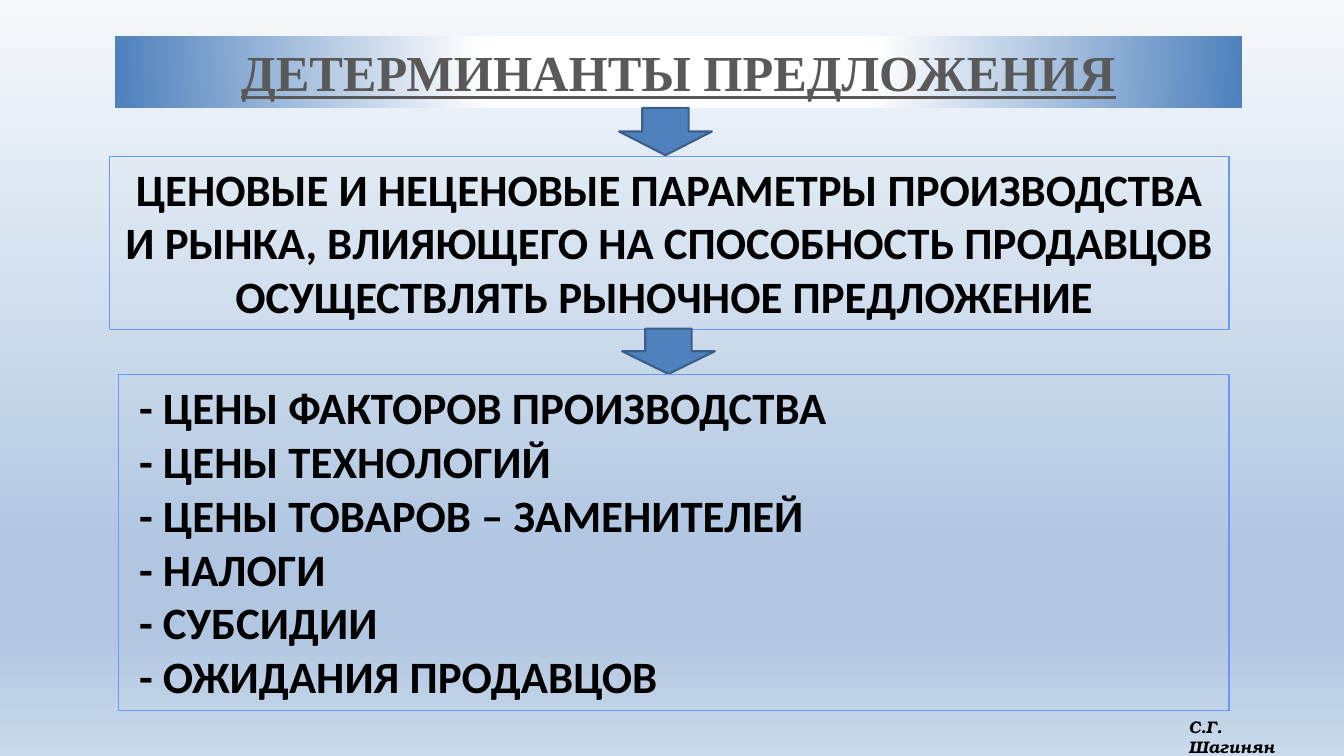
from dataclasses import dataclass

from lxml import etree
from pptx import Presentation
from pptx.dml.color import RGBColor
from pptx.enum.shapes import MSO_SHAPE
from pptx.enum.text import MSO_ANCHOR, MSO_AUTO_SIZE, PP_ALIGN
from pptx.oxml.ns import qn
from pptx.util import Inches, Pt

RECTANGLE, DOWN_ARROW = MSO_SHAPE.RECTANGLE, MSO_SHAPE.DOWN_ARROW
LEFT, CENTER = PP_ALIGN.LEFT, PP_ALIGN.CENTER
TOP = MSO_ANCHOR.TOP
GROW = MSO_AUTO_SIZE.SHAPE_TO_FIT_TEXT


@dataclass(frozen=True)
class Theme:
    blue: str = "4F81BD"
    arrow_edge: str = "3A5F8C"
    frame: str = "6699FF"
    title: str = "595959"
    text: str = "000000"
    title_font: str = "Times New Roman"
    body_font: str = "Calibri"
    author_font: str = "TeX Gyre Bonum"
    title_size: int = 36
    body_size: int = 32
    author_size: int = 12
    page_stops: tuple = ((0, "F6F9FC"), (74, "B0C6E1"), (83, "B0C6E1"), (100, "CAD9EB"))
    banner_stops: tuple = ((0, "FFFFFF"), (35, "FFFFFF"), (100, "4F81BD"))


THEME = Theme()

TITLE = "ДЕТЕРМИНАНТЫ ПРЕДЛОЖЕНИЯ"
DEFINITION = (
    "ЦЕНОВЫЕ И НЕЦЕНОВЫЕ ПАРАМЕТРЫ ПРОИЗВОДСТВА И РЫНКА, ВЛИЯЮЩЕГО "
    "НА СПОСОБНОСТЬ ПРОДАВЦОВ ОСУЩЕСТВЛЯТЬ РЫНОЧНОЕ ПРЕДЛОЖЕНИЕ "
)
FACTORS = (
    "- ЦЕНЫ ФАКТОРОВ ПРОИЗВОДСТВА",
    "- ЦЕНЫ ТЕХНОЛОГИЙ",
    "- ЦЕНЫ ТОВАРОВ – ЗАМЕНИТЕЛЕЙ",
    "- НАЛОГИ",
    "- СУБСИДИИ",
    "- ОЖИДАНИЯ ПРОДАВЦОВ",
)
AUTHOR = "С.Г. Шагинян"


def set_gradient(fill, owner, stops):
    """Give fill the stops and return its gradFill element, without a direction."""
    fill.gradient()
    gradient = owner.find(".//" + qn("a:gradFill"))
    for child in list(gradient):
        gradient.remove(child)
    stop_list = etree.SubElement(gradient, qn("a:gsLst"))
    for percent, color in stops:
        stop = etree.SubElement(stop_list, qn("a:gs"), pos=str(percent * 1000))
        etree.SubElement(stop, qn("a:srgbClr"), val=color)
    return gradient


def paint_background(page):
    gradient = set_gradient(page.background.fill, page._element, THEME.page_stops)
    etree.SubElement(gradient, qn("a:lin"), ang="5400000", scaled="0")


def add_plain_shape(page, kind, place, line=None, width=0.75):
    shape = page.shapes.add_shape(kind, *map(Inches, place))
    shape.shadow.inherit = False
    shape.fill.background()
    if line:
        shape.line.color.rgb = RGBColor.from_string(line)
        shape.line.width = Pt(width)
    else:
        shape.line.fill.background()
    return shape


def write(box, lines, font, size, color=THEME.text, align=LEFT, wrap=True,
          underline=None, italic=None):
    frame = box.text_frame
    frame.word_wrap = wrap
    frame.auto_size = GROW
    frame.vertical_anchor = TOP
    frame.text = "\n".join(lines)
    for para in frame.paragraphs:
        para.alignment = align
        para.font.name = font
        para.font.size = Pt(size)
        para.font.bold = True
        para.font.italic = italic
        para.font.underline = underline
        para.font.color.rgb = RGBColor.from_string(color)


def add_banner(page, place):
    banner = add_plain_shape(page, RECTANGLE, place)
    gradient = set_gradient(banner.fill, banner._element, THEME.banner_stops)
    path = etree.SubElement(gradient, qn("a:path"), path="circle")
    etree.SubElement(path, qn("a:fillToRect"),
                     l="50000", t="-80000", r="50000", b="180000")
    write(banner, [TITLE], THEME.title_font, THEME.title_size, THEME.title,
          CENTER, underline=True)


def add_arrow(page, place):
    arrow = add_plain_shape(page, DOWN_ARROW, place, THEME.arrow_edge, 1.5)
    arrow.fill.solid()
    arrow.fill.fore_color.rgb = RGBColor.from_string(THEME.blue)


def add_frame(page, place, lines, align, inset=0.1):
    box = add_plain_shape(page, RECTANGLE, place, THEME.frame)
    write(box, lines, THEME.body_font, THEME.body_size, align=align)
    box.text_frame.margin_left = Inches(inset)


def add_author(page, place):
    box = page.shapes.add_textbox(*map(Inches, place))
    write(box, [AUTHOR], THEME.author_font, THEME.author_size,
          wrap=False, italic=True)


def main():
    deck = Presentation()
    deck.slide_width, deck.slide_height = Inches(13.33), Inches(7.5)
    page = deck.slides.add_slide(deck.slide_layouts[6])
    paint_background(page)
    add_banner(page, (1.14, 0.36, 11.18, 0.71))
    add_arrow(page, (6.14, 1.07, 0.92, 0.47))
    add_frame(page, (1.09, 1.55, 11.1, 1.72), [DEFINITION], CENTER)
    add_author(page, (11.69, 7.06, 1.44, 0.3))
    add_arrow(page, (6.17, 3.26, 0.92, 0.45))
    add_frame(page, (1.18, 3.72, 11.01, 3.33), FACTORS, LEFT, inset=0.2)
    deck.save("out.pptx")


if __name__ == "__main__":
    main()
